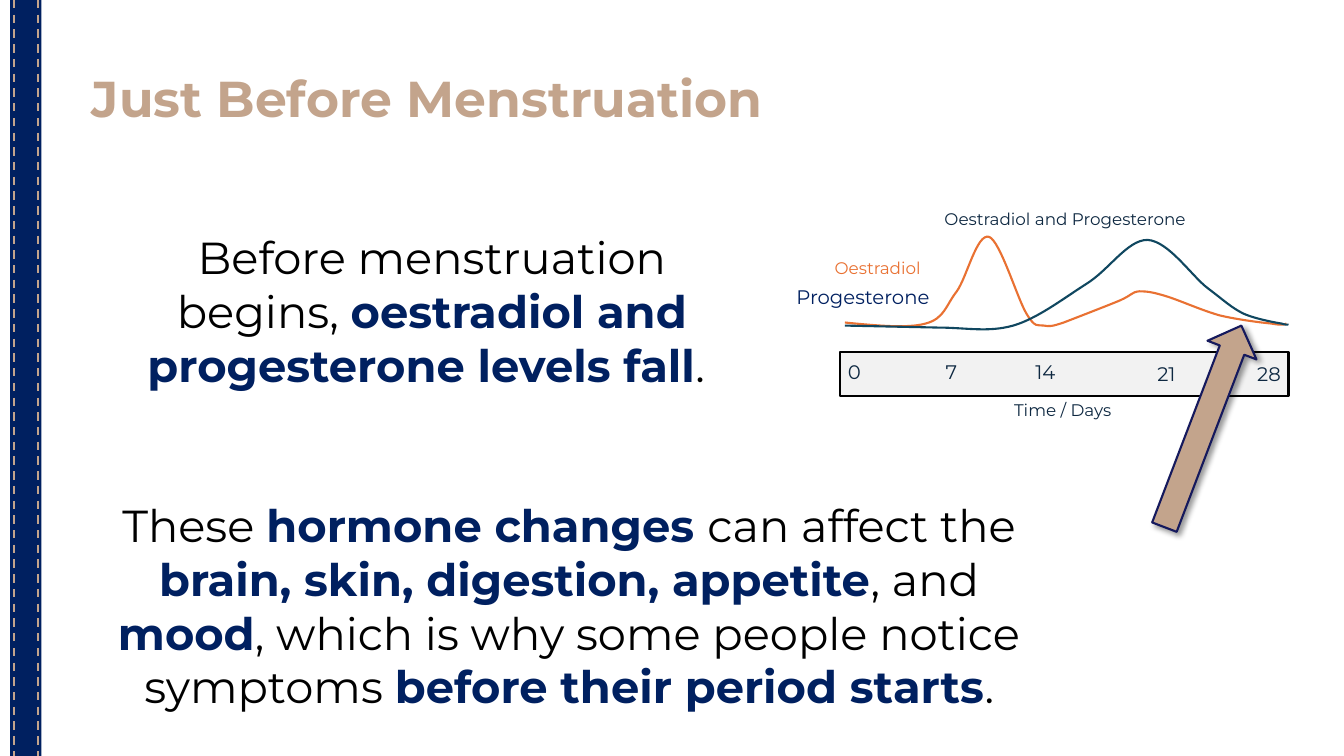
import pptx
import pptx.util
import pptx.dml.color
import pptx.enum.dml
import pptx.enum.shapes
import pptx.enum.text
import pptx.oxml
import pptx.oxml.ns
from pptx.util import Inches

COLORS = {
    "navy": "002060", "tan": "C3A48C", "black": "000000", "ink": "0E2841",
    "orange": "E97132", "teal": "104760", "band": "F2F2F2", "outline": "15195D",
    "white": "FFFFFF",
}
LEFT = pptx.enum.text.PP_ALIGN.LEFT
CENTER = pptx.enum.text.PP_ALIGN.CENTER
SHAPES = pptx.enum.shapes.MSO_SHAPE
NAMESPACE = pptx.oxml.ns.nsdecls("a")


def rgb(name):
    return pptx.dml.color.RGBColor.from_string(COLORS[name])


def write(box, place, runs, size, align=LEFT):
    box.left, box.top, box.width, box.height = [Inches(value) for value in place]
    frame = box.text_frame
    frame.word_wrap = True
    frame.auto_size = pptx.enum.text.MSO_AUTO_SIZE.NONE
    frame.vertical_anchor = pptx.enum.text.MSO_ANCHOR.TOP
    paragraph = frame.paragraphs[0]
    paragraph.alignment = align
    paragraph.space_before = pptx.util.Pt(0)
    for text, color, bold in runs:
        run = paragraph.add_run()
        run.text = text
        run.font.name = "Montserrat"
        run.font.size = pptx.util.Pt(size)
        run.font.bold = bold
        run.font.color.rgb = rgb(color)
    return paragraph


deck = pptx.Presentation()
deck.slide_width, deck.slide_height = Inches(13.33), Inches(7.5)
slide = deck.slides.add_slide(deck.slide_layouts[1])
shapes = slide.shapes

ribbon = shapes.add_shape(SHAPES.RECTANGLE, Inches(0.1), 0, Inches(0.31), Inches(7.5))
ribbon.shadow.inherit = False
ribbon.fill.solid()
ribbon.fill.fore_color.rgb = rgb("navy")
ribbon.line.fill.background()

dashed_lines = [
    (0.14, 0, 0.14, 7.5, "tan", 1.5),
    (0.38, 0, 0.38, 7.5, "tan", 1.5),
    (8.37, 2.01, 12.77, 2.01, "white", 3),
    (8.4, 3.5, 12.81, 3.5, "white", 3),
]
for x1, y1, x2, y2, color, weight in dashed_lines:
    dashes = shapes.add_connector(
        pptx.enum.shapes.MSO_CONNECTOR.STRAIGHT,
        Inches(x1), Inches(y1), Inches(x2), Inches(y2))
    dashes.line.color.rgb = rgb(color)
    dashes.line.width = pptx.util.Pt(weight)
    dashes.line.dash_style = pptx.enum.dml.MSO_LINE.DASH
    dashes._element.spPr.append(pptx.oxml.parse_xml(f"<a:effectLst {NAMESPACE}/>"))

heading = write(shapes.title, (0.81, 0.68, 12.05, 0.81),
                [("Just Before Menstruation", "tan", True)], 36)
heading.line_spacing = 0.9

hormone_fall = write(slide.placeholders[1], (1.12, 2.23, 6.33, 2.2), [
    ("Before menstruation begins, ", "black", False),
    ("oestradiol and progesterone levels fall", "navy", True),
    (". ", "navy", False),
], 32, CENTER)
hormone_fall.runs[-1].font.color.rgb = rgb("black")
properties = hormone_fall._p.get_or_add_pPr()
properties.set("marL", "0")
properties.set("indent", "0")
properties.append(pptx.oxml.parse_xml(f"<a:buNone {NAMESPACE}/>"))

hormone_curves = [
    ("orange", [
        (8.38, 3.2), (8.69, 3.23), (9, 3.26), (9.18, 3.21),
        (9.37, 3.16), (9.38, 3.03), (9.49, 2.89),
        (9.59, 2.75), (9.69, 2.31), (9.81, 2.35),
        (9.92, 2.39), (10.09, 2.96), (10.18, 3.11),
        (10.27, 3.26), (10.29, 3.22), (10.35, 3.23),
        (10.41, 3.24), (10.43, 3.24), (10.55, 3.2),
        (10.68, 3.15), (10.99, 3.03), (11.11, 2.98),
        (11.24, 2.92), (11.22, 2.9), (11.3, 2.89),
        (11.38, 2.89), (11.44, 2.9), (11.57, 2.94),
        (11.7, 2.98), (11.92, 3.08), (12.1, 3.13),
        (12.27, 3.17), (12.5, 3.2), (12.61, 3.21),
        (12.72, 3.23), (12.74, 3.22), (12.76, 3.21)]),
    ("teal", [
        (8.38, 3.23), (8.38, 3.23), (9.3, 3.25), (9.3, 3.25),
        (9.58, 3.25), (9.8, 3.3), (10.05, 3.23),
        (10.29, 3.16), (10.55, 2.96), (10.77, 2.82),
        (11, 2.68), (11.18, 2.38), (11.38, 2.38),
        (11.59, 2.39), (11.82, 2.74), (11.98, 2.86),
        (12.14, 2.98), (12.21, 3.05), (12.33, 3.11),
        (12.46, 3.17), (12.71, 3.21), (12.71, 3.21),
        (12.78, 3.23), (12.78, 3.22), (12.77, 3.21)]),
]
for color, points in hormone_curves:
    start, *bends = [(Inches(x), Inches(y)) for x, y in points]
    builder = shapes.build_freeform(*start)
    builder.add_line_segments(bends, close=False)
    curve = builder.convert_to_shape()
    segments = curve._element.spPr.findall(".//" + pptx.oxml.ns.qn("a:lnTo"))
    for first in range(0, len(segments), 3):
        bezier = pptx.oxml.parse_xml(f"<a:cubicBezTo {NAMESPACE}/>")
        segments[first].addprevious(bezier)
        for segment in segments[first:first + 3]:
            bezier.append(segment[0])
            segment.getparent().remove(segment)
    curve.shadow.inherit = False
    curve.fill.background()
    curve.line.color.rgb = rgb(color)
    curve.line.width = pptx.util.Pt(1.5)

day_band = shapes.add_shape(
    SHAPES.RECTANGLE, Inches(8.33), Inches(3.49), Inches(4.45), Inches(0.44))
day_band.shadow.inherit = False
day_band.fill.solid()
day_band.fill.fore_color.rgb = rgb("band")
day_band.line.color.rgb = rgb("black")
day_band.line.width = pptx.util.Pt(1.5)

chart_labels = [
    ("Oestradiol and Progesterone", (8.18, 2.02, 4.77, 0.3), 12, "ink", CENTER),
    ("Oestradiol", (8.18, 2.51, 1.07, 0.3), 12, "orange", LEFT),
    ("Progesterone", (7.8, 2.78, 1.62, 0.34), 14, "navy", LEFT),
    ("Time / Days", (9.96, 3.92, 1.18, 0.3), 12, "ink", LEFT),
    ("0", (8.31, 3.52, 0.31, 0.34), 14, "ink", LEFT),
    ("7", (9.28, 3.52, 0.31, 0.34), 14, "ink", LEFT),
    ("14", (10.17, 3.52, 0.42, 0.34), 14, "ink", LEFT),
    ("21", (11.38, 3.54, 0.42, 0.34), 14, "ink", LEFT),
    ("28", (12.37, 3.54, 0.58, 0.34), 14, "ink", LEFT),
]
for text, place, size, color, align in chart_labels:
    label = shapes.add_textbox(0, 0, 0, 0)
    write(label, place, [(text, color, False)], size, align)
    label.text_frame.word_wrap = text not in ("Oestradiol", "Time / Days")

fall_arrow = shapes.add_shape(
    SHAPES.LEFT_ARROW, Inches(10.86), Inches(3.97), Inches(2.14), Inches(0.52))
fall_arrow.rotation = 110.9
fall_arrow.fill.solid()
fall_arrow.fill.fore_color.rgb = rgb("tan")
fall_arrow.line.color.rgb = rgb("outline")
fall_arrow.line.width = pptx.util.Pt(1.5)
fall_arrow._element.spPr.append(pptx.oxml.parse_xml(
    f"<a:effectLst {NAMESPACE}>"
    '<a:outerShdw blurRad="50800" dist="38100" dir="2700000" algn="tl" rotWithShape="0">'
    f'<a:srgbClr val="{COLORS["black"]}"><a:alpha val="40000"/></a:srgbClr>'
    "</a:outerShdw></a:effectLst>"))

write(shapes.add_textbox(0, 0, 0, 0), (0.7, 4.89, 9.89, 2.4), [
    ("These ", "black", False),
    ("hormone changes ", "navy", True),
    ("can affect the ", "black", False),
    ("brain, skin, digestion, appetite", "navy", True),
    (", and ", "black", False),
    ("mood", "navy", True),
    (", which is why some people notice symptoms ", "black", False),
    ("before their period starts", "navy", True),
    (".", "black", False),
], 32, CENTER)

deck.save("out.pptx")
